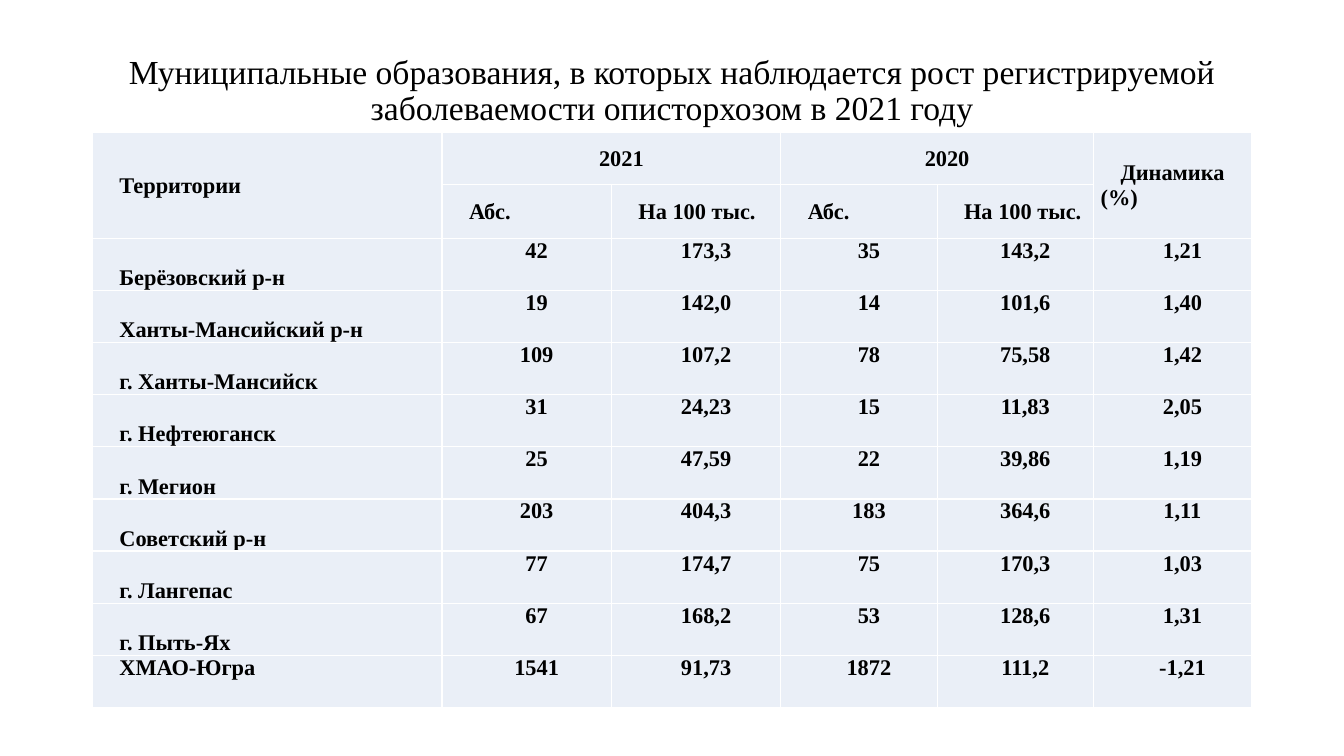
from dataclasses import dataclass
from lxml.etree import fromstring
from pptx import Presentation
from pptx.dml.color import RGBColor as RGB
from pptx.enum.text import MSO_ANCHOR as Anchor, PP_ALIGN as Align
from pptx.oxml.ns import nsdecls
from pptx.util import Cm, Pt


@dataclass(frozen=True)
class Theme:
    font: str = "Times New Roman"
    ink: str = "000000"
    fill: str = "EAEFF7"
    rule: str = "FFFFFF"
    title: int = 24
    body: int = 16


THEME = Theme()
TITLE = ("Муниципальные образования, в которых наблюдается рост "
         "регистрируемой заболеваемости описторхозом в 2021 году")
WIDTHS = (8.81, 4.27, 4.27, 3.94, 3.94, 3.98)
ROWS = (
    ("Территории", "2021", "", "2020", "", "Динамика (%)"),
    ("", "Абс.", "На 100 тыс.", "Абс.", "На 100 тыс.", ""),
    ("Берёзовский р-н", "42", "173,3", "35", "143,2", "1,21"),
    ("Ханты-Мансийский р-н", "19", "142,0", "14", "101,6", "1,40"),
    ("г. Ханты-Мансийск", "109", "107,2", "78", "75,58", "1,42"),
    ("г. Нефтеюганск", "31", "24,23", "15", "11,83", "2,05"),
    ("г. Мегион", "25", "47,59", "22", "39,86", "1,19"),
    ("Советский р-н", "203", "404,3", "183", "364,6", "1,11"),
    ("г. Лангепас", "77", "174,7", "75", "170,3", "1,03"),
    ("г. Пыть-Ях", "67", "168,2", "53", "128,6", "1,31"),
    ("ХМАО-Югра", "1541", "91,73", "1872", "111,2", "-1,21"),
)
MERGES = (((0, 0), (1, 0)), ((0, 1), (0, 2)),
          ((0, 3), (0, 4)), ((0, 5), (1, 5)))


def style(para, size, align, bold=False):
    para.alignment = align
    font = para.font
    font.name, font.size, font.bold = THEME.font, Pt(size), bold
    font.color.rgb = RGB.from_string(THEME.ink)


def add_title(slide, box):
    frame = slide.shapes.add_textbox(*box).text_frame
    frame.word_wrap = True
    frame.vertical_anchor = Anchor.TOP
    frame.margin_top = Cm(0.38)
    para = frame.paragraphs[0]
    para.text = TITLE
    para.line_spacing = 0.9
    style(para, THEME.title, Align.CENTER)


def edge(cell):
    """Rule all four sides of the cell; lines must precede its fill."""
    props = cell._tc.get_or_add_tcPr()
    for spot, side in enumerate("LRTB"):
        props.insert(spot, fromstring(
            f'<a:ln{side} {nsdecls("a")} w="{Pt(1)}"><a:solidFill>'
            f'<a:srgbClr val="{THEME.rule}"/></a:solidFill></a:ln{side}>'))


def place(row, col):
    """Return the anchor and alignment of the cell."""
    if row < 2:
        wide = row == 0 and col in (1, 3)
        return Anchor.MIDDLE, Align.CENTER if wide else Align.JUSTIFY
    if col:
        return Anchor.TOP, Align.CENTER
    last = row == len(ROWS) - 1
    return Anchor.TOP if last else Anchor.BOTTOM, Align.JUSTIFY


def fill_cell(cell, text, anchor, align):
    cell.fill.solid()
    cell.fill.fore_color.rgb = RGB.from_string(THEME.fill)
    edge(cell)
    cell.margin_left = cell.margin_right = Cm(0.18)
    cell.margin_top = cell.margin_bottom = 0
    cell.vertical_anchor = anchor
    para = cell.text_frame.paragraphs[0]
    para.text = text
    style(para, THEME.body, align, bold=True)
    props = para._p.get_or_add_pPr()
    props.set("marL", "0")
    props.set("indent", str(Cm(0.5)))


def add_grid(slide, box):
    table = slide.shapes.add_table(len(ROWS), len(WIDTHS), *box).table
    table.first_row = table.horz_banding = False
    for col, width in zip(table.columns, WIDTHS):
        col.width = Cm(width)
    for r, texts in enumerate(ROWS):
        table.rows[r].height = box[3] // len(ROWS)
        for c, text in enumerate(texts):
            fill_cell(table.cell(r, c), text, *place(r, c))
    for start, end in MERGES:
        table.cell(*start).merge(table.cell(*end))


def main():
    deck = Presentation()
    deck.slide_width, deck.slide_height = Cm(33.87), Cm(19.05)
    slide = deck.slides.add_slide(deck.slide_layouts[6])
    left, width = Cm(2.33), Cm(sum(WIDTHS))
    add_title(slide, (left, Cm(1.01), width, Cm(3.68)))
    add_grid(slide, (left, Cm(3.34), width, Cm(14.45)))
    deck.save("out.pptx")


if __name__ == "__main__":
    main()
